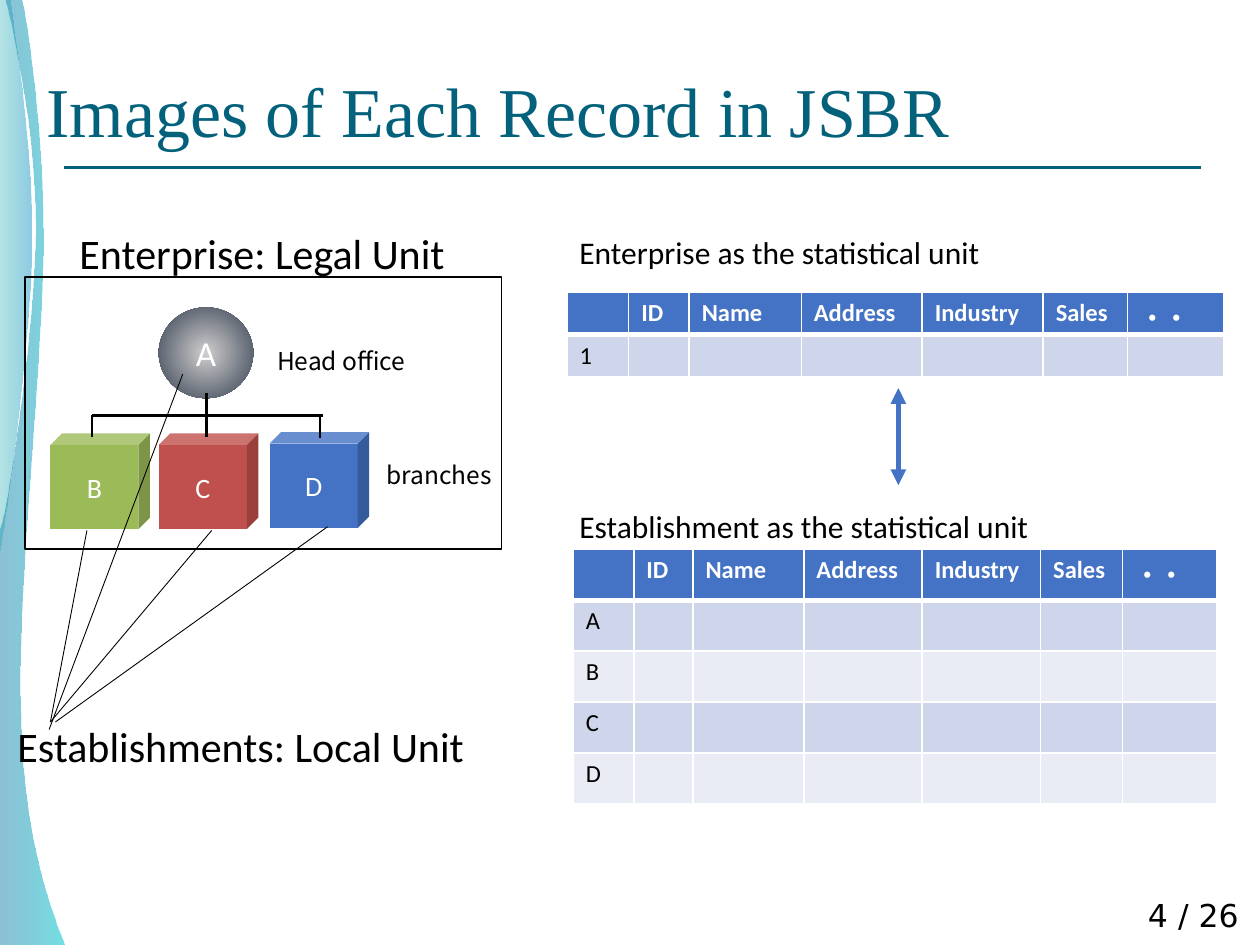
from lxml import etree
from pptx import Presentation
from pptx.dml.color import RGBColor
from pptx.enum.shapes import MSO_CONNECTOR, MSO_SHAPE
from pptx.enum.text import MSO_ANCHOR, MSO_AUTO_SIZE, PP_ALIGN
from pptx.oxml import parse_xml
from pptx.oxml.ns import qn
from pptx.util import Inches, Pt

LEFT, CENTER, RIGHT = PP_ALIGN.LEFT, PP_ALIGN.CENTER, PP_ALIGN.RIGHT
TOP, MIDDLE, BOTTOM = MSO_ANCHOR.TOP, MSO_ANCHOR.MIDDLE, MSO_ANCHOR.BOTTOM
NS = 'xmlns:a="http://schemas.openxmlformats.org/drawingml/2006/main"'
BLACK, WHITE, BLUE, TEAL = "000000", "FFFFFF", "4472C4", "04617B"
BANDS = ["CFD5EA", "E9EBF5"]

TITLE = "Images of Each Record in JSBR"
HEADER = ["", "ID", "Name", "Address", "Industry", "Sales", "・・"]
TABLES = [
    ((4.55, 4.36), [0.48, 0.47, 0.88, 0.94, 0.94, 0.65, 0.75], 2.02, ["A", "B", "C", "D"]),
    ((4.5, 2.32), [0.49, 0.48, 0.89, 0.96, 0.96, 0.67, 0.76], 0.67, ["1"]),
]
CAPTIONS = [
    ("Enterprise: Legal Unit", (0.52, 1.35, 3.12, 0.91), 24, "Calibri", CENTER, BOTTOM, 0.9),
    ("Establishments: Local Unit", (0.04, 5.22, 4.26, 1.45), 24, "Calibri", LEFT, MIDDLE, 0.9),
    ("Enterprise as the statistical unit", (4.5, 1.73, 3.67, 0.57), 18, "Calibri", LEFT, MIDDLE, 0.9),
    ("Establishment as the statistical unit", (4.5, 3.91, 4.77, 0.57), 18, "Calibri", LEFT, MIDDLE, 0.9),
    ("Head office", (2.1, 2.7, 1.31, 0.24), 14, "Noto Sans CJK JP", LEFT, TOP, None),
    ("branches", (2.97, 3.6, 1.14, 0.34), 14, "Noto Sans CJK JP", LEFT, TOP, None),
    ("4 / 26", (7.6, 7.06, 2.33, 0.5), 18, "DejaVu Sans", RIGHT, TOP, None),
]
BRANCHES = [("B", 0.4, 3.44, "9BBB59"), ("C", 1.26, 3.44, "C0504D"), ("D", 2.14, 3.43, BLUE)]
TREE_LINES = [
    (0.73, 3.3, 2.56, 3.3),
    (0.73, 3.29, 0.73, 3.47),
    (2.54, 3.31, 2.54, 3.48),
    (1.64, 3.12, 1.64, 3.47),
]
LEADERS = [
    (0.39, 5.79, 1.45, 2.97),
    (0.4, 5.73, 0.69, 4.21),
    (0.4, 5.73, 1.68, 4.21),
    (0.44, 5.73, 2.6, 4.18),
]
RIBBONS = [
    ([(0, 7.5), (0, 4.2), (0.08, 3.93, 0.28, 2.52, 0.28, 1.81), (0.28, 1.1, 0.12, 0.31, 0.04, 0),
      (0.17, 0), (0.2, 0.12, 0.34, 0.97, 0.34, 1.9), (0.34, 2.83, 0.13, 4.64, 0.16, 5.57),
      (0.16, 6.53, 0.37, 7.16, 0.51, 7.5)],
     [("0074A1", 45), ("00C6CF", 55)]),
    ([(0, 4.37), (0.05, 4.12, 0.24, 2.67, 0.25, 1.94), (0.26, 1.21, 0.12, 0.32, 0.08, 0), (0, 0)],
     [("00A1A9", 30), ("008BBF", 45)]),
]


def rgb(value):
    return RGBColor.from_string(value)


def style(p, size, font, color, align=None, bold=None):
    p.font.size, p.font.name, p.font.bold = Pt(size), font, bold
    p.font.color.rgb = rgb(color)
    p.alignment = align


def add_caption(s, text, box, size, font, align, anchor, spacing):
    tf = s.shapes.add_textbox(*map(Inches, box)).text_frame
    tf.word_wrap, tf.vertical_anchor = True, anchor
    p = tf.paragraphs[0]
    p.text = text
    p.line_spacing = spacing
    style(p, size, font, BLACK, align)


def add_line(s, ends, color, width, arrows=False):
    line = s.shapes.add_connector(MSO_CONNECTOR.STRAIGHT, *map(Inches, ends))
    line.line.color.rgb = rgb(color)
    line.line.width = Pt(width)
    if arrows:
        ln = line.line._get_or_add_ln()
        for end in ("a:headEnd", "a:tailEnd"):
            etree.SubElement(ln, qn(end), type="triangle")
    etree.SubElement(line._element.spPr, qn("a:effectLst"))


def set_gradient(shape, stops):
    shape.fill.gradient()
    for stop, (color, opacity) in zip(shape.fill.gradient_stops, stops):
        stop.color.rgb = rgb(color)
        if opacity < 100:
            clr = stop._gs.find(qn("a:srgbClr"))
            etree.SubElement(clr, qn("a:alpha"), val=str(opacity * 1000))
    shape.fill.gradient_angle = 0


def add_ribbon(s, segments, stops):
    segments = [tuple(map(Inches, seg)) for seg in segments]
    ends = [seg[-2:] for seg in segments]
    builder = s.shapes.build_freeform(*ends[0])
    builder.add_line_segments(ends[1:], close=True)
    ribbon = builder.convert_to_shape()
    steps = list(ribbon._element.iter(qn("a:lnTo")))
    for step, seg in zip(steps, segments[1:]):
        if len(seg) == 6:
            step.tag = qn("a:cubicBezTo")
            for i in (0, 2):
                pt = etree.Element(qn("a:pt"), x=str(int(seg[i])), y=str(int(seg[i + 1])))
                step.insert(i // 2, pt)
    ribbon.shadow.inherit = False
    ribbon.line.fill.background()
    set_gradient(ribbon, stops)


def add_unit(s, kind, box, text="", size=16, color=None):
    shape = s.shapes.add_shape(kind, *map(Inches, box))
    shape.shadow.inherit = False
    shape.line.fill.background()
    if color:
        shape.fill.solid()
        shape.fill.fore_color.rgb = rgb(color)
    else:
        shape.fill.background()
    if text:
        tf = shape.text_frame
        tf.vertical_anchor = MIDDLE
        tf.paragraphs[0].text = text
        style(tf.paragraphs[0], size, "Calibri", WHITE, CENTER)
    return shape


def set_borders(cell, top, bottom):
    tcPr = cell._tc.get_or_add_tcPr()
    for side, width in (("L", 1), ("R", 1), ("T", top), ("B", bottom)):
        tcPr.append(parse_xml(
            f'<a:ln{side} {NS} w="{Pt(width)}"><a:solidFill>'
            f'<a:srgbClr val="{WHITE}"/></a:solidFill></a:ln{side}>'))


def add_records(s, corner, widths, height, labels):
    rows = [HEADER] + [[label] + [""] * (len(HEADER) - 1) for label in labels]
    table = s.shapes.add_table(len(rows), len(HEADER), *map(
        Inches, (*corner, sum(widths), height))).table
    for column, width in zip(table.columns, widths):
        column.width = Inches(width)
    for i, row in enumerate(rows):
        head = i == 0
        for j, text in enumerate(row):
            cell = table.cell(i, j)
            set_borders(cell, 3 if i == 1 else 1, 3 if head else 1)
            cell.fill.solid()
            cell.fill.fore_color.rgb = rgb(BLUE if head else BANDS[(i - 1) % 2])
            p = cell.text_frame.paragraphs[0]
            if text:
                p.text = text
            style(p, 14, "Calibri", WHITE if head else BLACK, bold=head)


def main():
    prs = Presentation()
    prs.slide_width, prs.slide_height = Inches(10), Inches(7.5)
    s = prs.slides.add_slide(prs.slide_layouts[5])
    add_line(s, (0.51, 1.33, 9.53, 1.33), TEAL, 1.5)
    for segments, stops in RIBBONS:
        add_ribbon(s, segments, stops)

    title = s.shapes.title
    title.left, title.top, title.width, title.height = map(Inches, (0.27, 0, 10.09, 1.25))
    tf = title.text_frame
    tf.text = TITLE
    tf.auto_size, tf.vertical_anchor = MSO_AUTO_SIZE.NONE, BOTTOM
    style(tf.paragraphs[0], 40, "Times New Roman", TEAL, LEFT)

    frame = add_unit(s, MSO_SHAPE.RECTANGLE, (0.2, 2.2, 3.78, 2.16))
    frame.line.color.rgb = rgb(BLACK)
    frame.line.width = Pt(1)
    for text, x, y, color in BRANCHES:
        cube = add_unit(s, MSO_SHAPE.CUBE, (x, y, 0.79, 0.76), text, color=color)
        cube.adjustments[0] = 0.12
    office = add_unit(s, MSO_SHAPE.OVAL, (1.26, 2.44, 0.75, 0.72), "A", 20)
    set_gradient(office, [("D0CECE", 100), ("333F50", 100)])
    lin = office._element.spPr.find(".//" + qn("a:lin"))
    lin.getparent().replace(lin, parse_xml(
        f'<a:path {NS} path="circle"><a:fillToRect l="50000" t="50000" r="50000" b="50000"/></a:path>'))

    for ends in TREE_LINES:
        add_line(s, ends, BLACK, 1.5)
    for caption in CAPTIONS:
        add_caption(s, *caption)
    for records in TABLES:
        add_records(s, *records)
    for ends in LEADERS:
        add_line(s, ends, BLACK, 0.5)
    add_line(s, (7.13, 3.08, 7.13, 3.85), BLUE, 3, arrows=True)
    prs.save("out.pptx")


if __name__ == "__main__":
    main()
